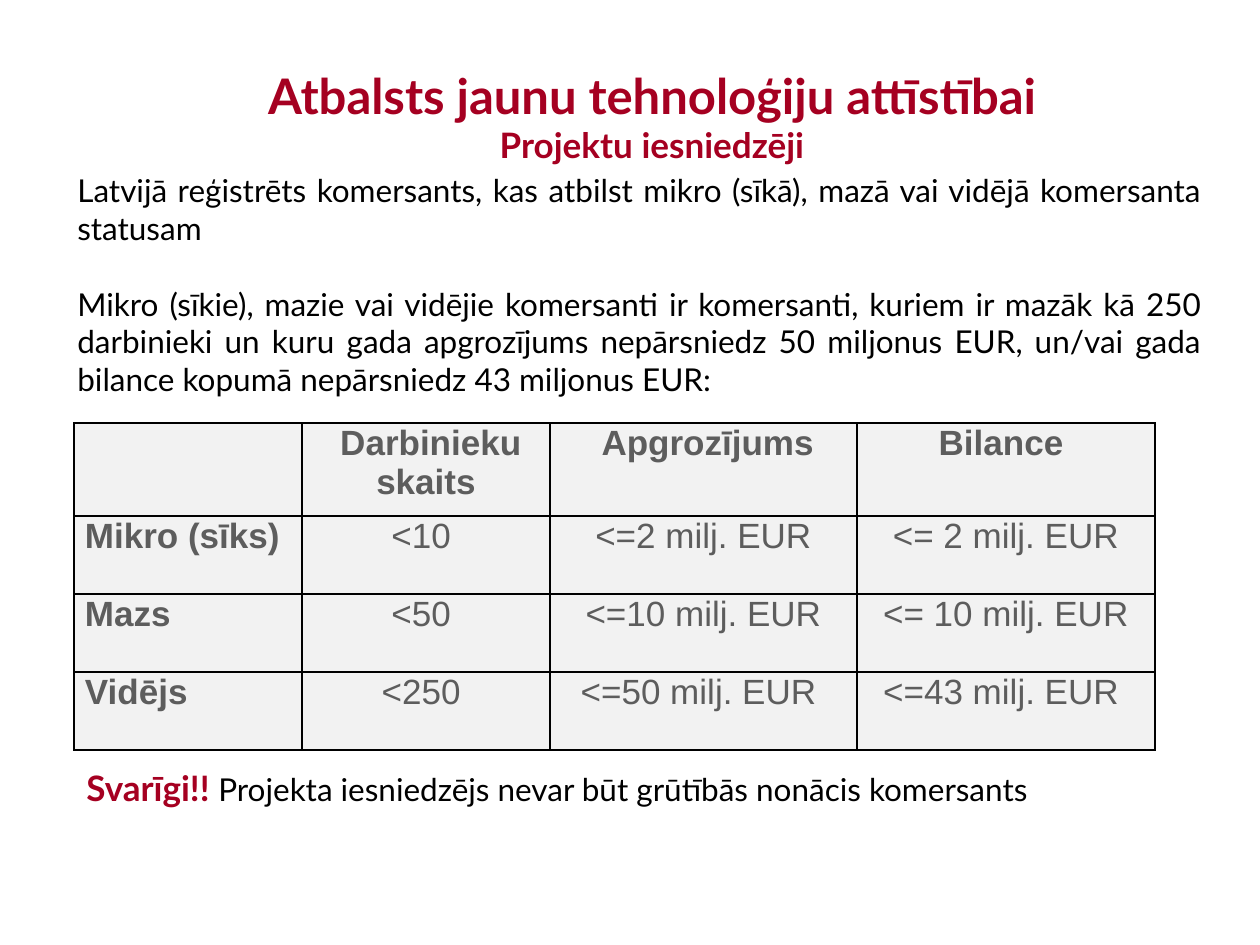
from lxml import etree
from pptx import Presentation
from pptx import util as u
from pptx.dml.color import RGBColor
from pptx.enum import text
from pptx.oxml import ns

PX = u.Inches(1) // 126
RED = RGBColor(0xA5, 0x00, 0x21)
BLACK = RGBColor(0x00, 0x00, 0x00)
GREY = RGBColor(0x5D, 0x5D, 0x5D)
PALE = RGBColor(0xF2, 0xF2, 0xF2)

BODY = [
    "Latvijā reģistrēts komersants, kas atbilst mikro (sīkā), mazā vai vidējā "
    "komersanta statusam",
    "Mikro (sīkie), mazie vai vidējie komersanti ir komersanti, kuriem ir mazāk "
    "kā 250 darbinieki un kuru gada apgrozījums nepārsniedz 50 miljonus EUR, "
    "un/vai gada bilance kopumā nepārsniedz 43 miljonus EUR:",
]
COLUMNS = [228, 248, 307, 298]
ROWS = [93, 78, 78, 78]
# A single space at either end shifts the centred text slightly.
CELLS = [
    ["", " Darbinieku skaits", " Apgrozījums", "Bilance "],
    ["Mikro (sīks)", "<10 ", " <=2 milj. EUR ", " <= 2 milj. EUR "],
    ["Mazs", "<50 ", " <=10 milj. EUR ", " <= 10 milj. EUR "],
    ["Vidējs", "<250 ", "<=50 milj. EUR ", "<=43 milj. EUR "],
]


def px(length):
    return u.Emu(length * PX)


def add_span(para, words, size, color, bold=False, font="Lato"):
    span = para.add_run()
    span.text = words
    span.font.name = font
    span.font.size = u.Pt(size)
    span.font.bold = bold
    span.font.color.rgb = color


def add_box(page, left, top, width, height):
    """Add a wrapping text box and return its text frame."""
    box = page.shapes.add_textbox(px(left), px(top), px(width), px(height))
    box.text_frame.word_wrap = True
    return box.text_frame


def add_title(page):
    frame = add_box(page, 44, 65, 1216, 101)
    frame.margin_top = frame.margin_bottom = 0
    frame.vertical_anchor = text.MSO_ANCHOR.MIDDLE
    para = frame.paragraphs[0]
    para.alignment = text.PP_ALIGN.CENTER
    add_span(para, "Atbalsts jaunu tehnoloģiju attīstībai", 28, RED, True)
    para.add_line_break()
    add_span(para, "Projektu iesniedzēji", 20, RED, True)


def add_body(page):
    frame = add_box(page, 54, 165, 1160, 242)
    for index, words in enumerate(BODY):
        para = frame.add_paragraph() if index else frame.paragraphs[0]
        para.alignment = text.PP_ALIGN.JUSTIFY
        para._p.get_or_add_pPr().set("marL", str(px(11)))
        if index:
            para.space_before = u.Pt(21.6)
        add_span(para, words, 18, BLACK)


def add_note(page):
    para = add_box(page, 74, 760, 1110, 55).paragraphs[0]
    para.alignment = text.PP_ALIGN.JUSTIFY
    add_span(para, "Svarīgi!! ", 20, RED, True)
    add_span(para, "Projekta iesniedzējs nevar būt grūtībās nonācis komersants",
             18, BLACK)


def add_borders(cell):
    props = cell._tc.get_or_add_tcPr()
    for side in ("lnL", "lnR", "lnT", "lnB"):
        line = etree.SubElement(props, ns.qn("a:" + side), w=str(u.Pt(1)))
        fill = etree.SubElement(line, ns.qn("a:solidFill"))
        etree.SubElement(fill, ns.qn("a:srgbClr"), val=str(BLACK))


def fill_cell(cell, words, is_header, is_label):
    add_borders(cell)
    cell.fill.solid()
    cell.fill.fore_color.rgb = PALE
    cell.margin_top = cell.margin_right = cell.margin_bottom = px(1)
    cell.margin_left = px(11 if is_label else 1)
    if words:
        para = cell.text_frame.paragraphs[0]
        para.alignment = text.PP_ALIGN.LEFT if is_label else text.PP_ALIGN.CENTER
        add_span(para, words, 20, GREY, is_header or is_label, "Arial")


def add_size_table(page):
    table = page.shapes.add_table(
        len(ROWS), len(COLUMNS), px(74), px(423),
        px(sum(COLUMNS)), px(sum(ROWS))).table
    table.first_row = table.horz_banding = False
    for column, width in zip(table.columns, COLUMNS):
        column.width = px(width)
    for row, height, line in zip(table.rows, ROWS, CELLS):
        row.height = px(height)
        for index, (cell, words) in enumerate(zip(row.cells, line)):
            fill_cell(cell, words, line is CELLS[0], index == 0)


def main():
    deck = Presentation()
    deck.slide_width, deck.slide_height = px(1260), px(945)
    page = deck.slides.add_slide(deck.slide_layouts[6])
    add_title(page)
    add_size_table(page)
    add_body(page)
    add_note(page)
    deck.save("out.pptx")


if __name__ == "__main__":
    main()
